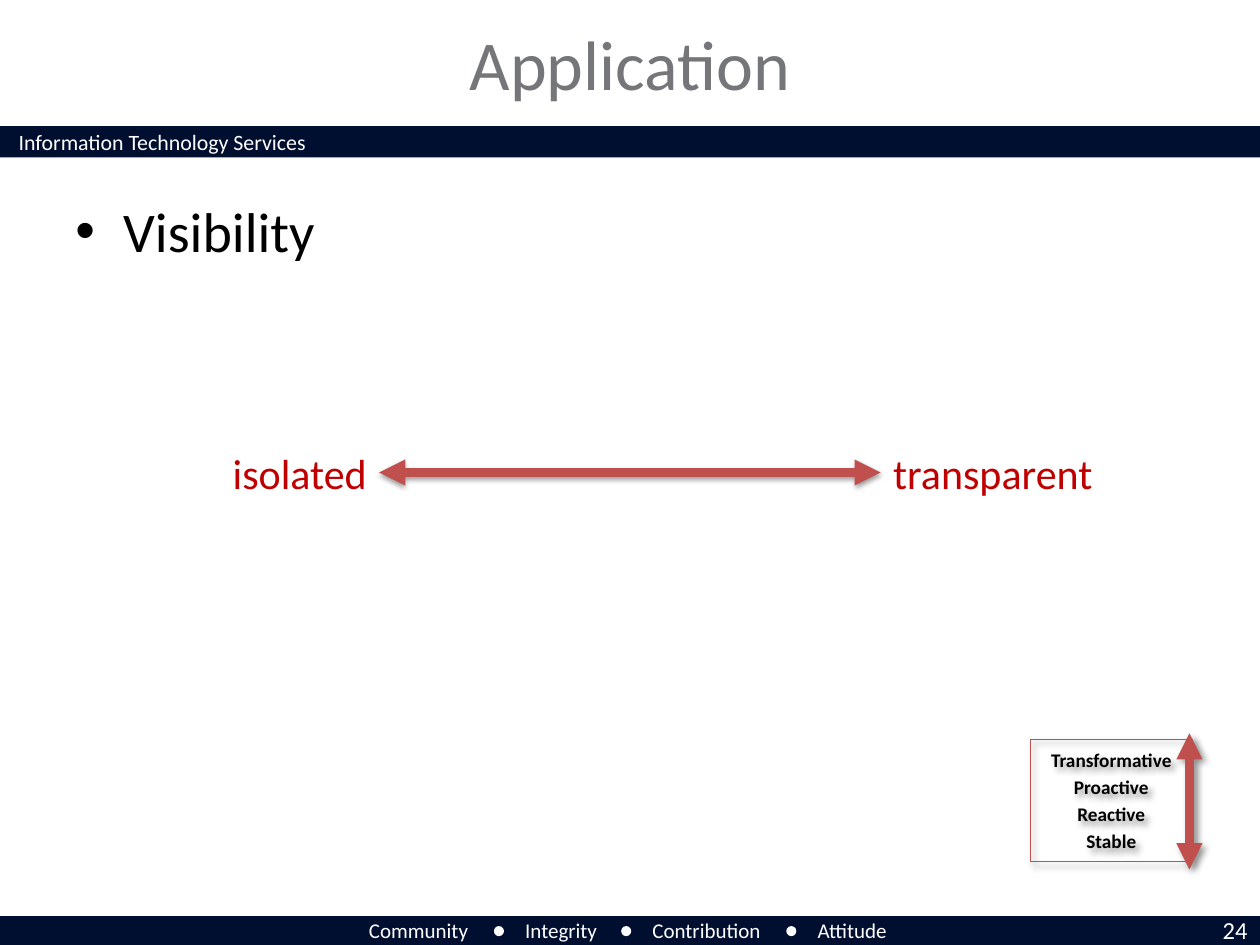
from lxml.etree import SubElement
from pptx import Presentation
from pptx.dml.color import RGBColor
from pptx.enum.shapes import MSO_CONNECTOR, MSO_SHAPE
from pptx.enum.text import MSO_ANCHOR, PP_ALIGN
from pptx.oxml.ns import qn
from pptx.util import Inches, Pt

COLORS = {
    "navy": "000E2F",
    "white": "FFFFFF",
    "gray": "747679",
    "black": "000000",
    "red": "C00000",
    "brick": "C0504D",
}
SOFT_SHADOW = {"blurRad": Pt(3.1), "dist": Pt(1.6), "dir": 90 * 60000, "opacity": 38}
DEEP_SHADOW = {"blurRad": Pt(4), "dist": Pt(3), "dir": 45 * 60000, "opacity": 40}


def color(name):
    """Return the named colour."""
    return RGBColor.from_string(COLORS[name])


def write(frame, lines, font, align=PP_ALIGN.LEFT, gap=0):
    """Fill a text frame with one paragraph per line."""
    for index, line in enumerate(lines):
        para = frame.add_paragraph() if index else frame.paragraphs[0]
        para.alignment = align
        para.space_before = Pt(gap if index else 0)
        span = para.add_run()
        span.text = line
        formats = {"name": "Calibri", **font}
        span.font.color.rgb = color(formats.pop("color"))
        for name, value in formats.items():
            setattr(span.font, name, value)


def add_text(page, bounds, text, size, tint, align=PP_ALIGN.LEFT, **frame_format):
    """Add a text box holding one line."""
    box = page.shapes.add_textbox(*map(Inches, bounds))
    for name, value in {"word_wrap": True, **frame_format}.items():
        setattr(box.text_frame, name, value)
    write(box.text_frame, [text], {"size": Pt(size), "color": tint}, align)
    return box


def add_solid(page, kind, bounds, fill):
    """Add a filled shape without outline."""
    shape = page.shapes.add_shape(kind, *map(Inches, bounds))
    shape.shadow.inherit = False
    shape.fill.solid()
    shape.fill.fore_color.rgb = color(fill)
    shape.line.fill.background()


def cast_shadow(shape, shadow):
    """Give a shape or connector an outer shadow."""
    properties = shape._element.spPr
    effects = properties.find(qn("a:effectLst"))
    if effects is None:
        effects = SubElement(properties, qn("a:effectLst"))
    outer = SubElement(effects, qn("a:outerShdw"), rotWithShape="0")
    for name in ("blurRad", "dist", "dir"):
        outer.set(name, str(int(shadow[name])))
    tint = SubElement(outer, qn("a:srgbClr"), val=COLORS["black"])
    SubElement(tint, qn("a:alpha"), val=str(shadow["opacity"] * 1000))


def add_double_arrow(page, ends, shadow):
    """Add a thick line with an arrowhead at both ends."""
    arrow = page.shapes.add_connector(MSO_CONNECTOR.STRAIGHT, *map(Inches, ends))
    arrow.line.color.rgb = color("brick")
    arrow.line.width = Pt(5)
    for end in ("a:headEnd", "a:tailEnd"):
        SubElement(arrow.line._get_or_add_ln(), qn(end), type="triangle")
    cast_shadow(arrow, shadow)


def add_header(page, left, top, width):
    """Place the title and the department band."""
    add_solid(page, MSO_SHAPE.RECTANGLE, (left, top + 1, width, 0.25), "navy")
    add_text(page, (left + 0.05, top + 0.97, 3.4, 0.32),
             "Information Technology Services", 12.5, "white")
    add_text(page, (left + 1, top + 0.1, width - 2, 0.8), "Application", 40, "gray",
             PP_ALIGN.CENTER, vertical_anchor=MSO_ANCHOR.MIDDLE)


def add_footer(page, left, top, width):
    """Place the values band and the page number."""
    add_solid(page, MSO_SHAPE.RECTANGLE, (left, top, width, 0.25), "navy")
    values = [("Community", 2.83, 1), ("Integrity", 4.07, 0.8),
              ("Contribution", 5.08, 1.1), ("Attitude", 6.39, 0.78)]
    for index, (value, offset, extent) in enumerate(values):
        add_text(page, (left + offset, top - 0.04, extent, 0.3), value, 12, "white",
                 word_wrap=False)
        if index:
            add_solid(page, MSO_SHAPE.OVAL,
                      (left + offset - 0.15, top + 0.08, 0.08, 0.08), "white")
    add_text(page, (left + width - 0.76, top - 0.06, 0.76, 0.34), "24", 14, "white",
             PP_ALIGN.RIGHT)


def add_bullet(page, left, top, width, height):
    """Place the bulleted topic."""
    box = add_text(page, (left, top, width, height), "Visibility", 32, "black")
    properties = box.text_frame.paragraphs[0]._p.get_or_add_pPr()
    indent = Inches(0.38)
    properties.set("marL", str(indent))
    properties.set("indent", str(-indent))
    SubElement(properties, qn("a:buFont"), typeface="Arial")
    SubElement(properties, qn("a:buChar"), char="•")


def add_spectrum(page, left, top, width, height):
    """Place the isolated to transparent scale."""
    start, end = left + 1.28, left + width - 1.8
    middle = top + height / 2
    add_double_arrow(page, (start, middle, end, middle), SOFT_SHADOW)
    add_text(page, (end, top, 1.8, height), "transparent", 24, "red", word_wrap=False)
    add_text(page, (left, top, 1.28, height), "isolated", 24, "red", PP_ALIGN.RIGHT,
             word_wrap=False)


def add_maturity_key(page, left, top, width, height):
    """Place the boxed maturity levels and their arrow."""
    box = page.shapes.add_shape(MSO_SHAPE.RECTANGLE,
                                *map(Inches, (left, top, width, height)))
    box.shadow.inherit = False
    box.fill.background()
    box.line.color.rgb = color("brick")
    box.line.width = Pt(0.75)
    cast_shadow(box, DEEP_SHADOW)
    box.text_frame.word_wrap = True
    box.text_frame.vertical_anchor = MSO_ANCHOR.MIDDLE
    write(box.text_frame, ["Transformative", "Proactive", "Reactive", "Stable"],
          {"size": Pt(11), "bold": True, "color": "black"}, PP_ALIGN.CENTER, 2.2)
    across = left + width - 0.02
    add_double_arrow(page, (across, top - 0.05, across, top + height + 0.06), DEEP_SHADOW)


def main():
    """Build and save the slide."""
    deck = Presentation()
    deck.slide_width, deck.slide_height = Inches(10), Inches(7.5)
    page = deck.slides.add_slide(deck.slide_layouts[6])
    add_header(page, 0, 0, 10)
    add_footer(page, 0, 7.27, 10)
    add_bullet(page, 0.5, 1.51, 9, 0.74)
    add_spectrum(page, 1.73, 3.5, 7.06, 0.5)
    add_maturity_key(page, 8.18, 5.87, 1.28, 0.97)
    deck.save("out.pptx")


if __name__ == "__main__":
    main()
